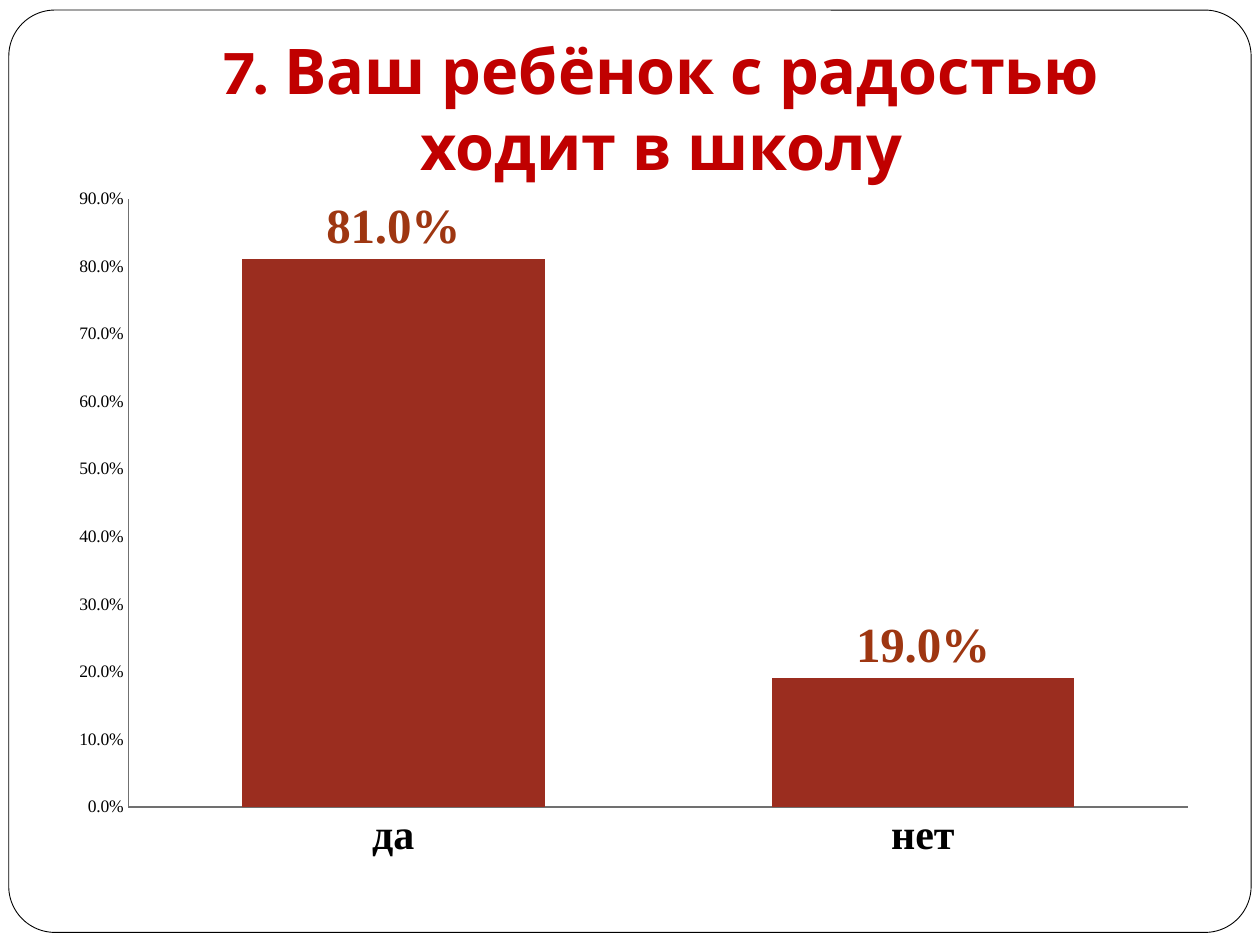
from dataclasses import dataclass

from lxml import etree
from pptx import Presentation
from pptx.chart.data import CategoryChartData
from pptx.dml.color import RGBColor
from pptx.enum.chart import XL_CHART_TYPE, XL_LABEL_POSITION, XL_TICK_MARK
from pptx.enum.shapes import MSO_SHAPE
from pptx.enum.text import MSO_ANCHOR, PP_ALIGN
from pptx.oxml.ns import qn
from pptx.util import Inches, Pt

COLUMNS = XL_CHART_TYPE.COLUMN_CLUSTERED
OUTSIDE_END = XL_LABEL_POSITION.OUTSIDE_END
NO_TICKS = XL_TICK_MARK.NONE
ROUNDED = MSO_SHAPE.ROUNDED_RECTANGLE
BOTTOM = MSO_ANCHOR.BOTTOM
CENTER = PP_ALIGN.CENTER


@dataclass(frozen=True)
class Theme:
    paper: RGBColor = RGBColor.from_string("FFFFFF")
    ink: RGBColor = RGBColor.from_string("000000")
    axis: RGBColor = RGBColor.from_string("707070")
    title: RGBColor = RGBColor.from_string("C00000")
    bar: RGBColor = RGBColor.from_string("9B2D1F")
    label: RGBColor = RGBColor.from_string("9E3611")
    title_font: str = "Karla"
    chart_font: str = "Times New Roman"
    title_size: int = 36
    label_size: int = 28
    category_size: int = 24
    scale_size: int = 10


THEME = Theme()


def style_font(font, name, size, color, bold=False):
    font.name = name
    font.size = Pt(size)
    font.color.rgb = color
    font.bold = bold


def add_frame(page, box):
    frame = page.shapes.add_shape(ROUNDED, *box)
    frame.adjustments[0] = 0.05
    frame.shadow.inherit = False
    frame.fill.solid()
    frame.fill.fore_color.rgb = THEME.paper
    frame.line.color.rgb = THEME.ink
    frame.line.width = Pt(0.5)


def add_title(page, box, text):
    text_frame = page.shapes.add_textbox(*box).text_frame
    text_frame.word_wrap = True
    text_frame.vertical_anchor = BOTTOM
    text_frame.margin_bottom = Inches(0.1)
    para = text_frame.paragraphs[0]
    para.alignment = CENTER
    span = para.add_run()
    span.text = text
    style_font(span.font, THEME.title_font, THEME.title_size, THEME.title, True)


def set_plot_area(chart, **fractions):
    plot_area = chart._chartSpace.chart.plotArea
    for old in plot_area.findall(qn("c:layout")):
        plot_area.remove(old)
    layout = etree.Element(qn("c:layout"))
    manual = etree.SubElement(layout, qn("c:manualLayout"))
    settings = {"layoutTarget": "inner", "xMode": "edge", "yMode": "edge", **fractions}
    for name, value in settings.items():
        etree.SubElement(manual, qn(f"c:{name}")).set("val", str(value))
    plot_area.insert(0, layout)


def style_axis(axis, size, bold=False):
    axis.has_major_gridlines = False
    axis.major_tick_mark = NO_TICKS
    axis.minor_tick_mark = NO_TICKS
    axis.format.line.color.rgb = THEME.axis
    axis.format.line.width = Pt(0.75)
    style_font(axis.tick_labels.font, THEME.chart_font, size, THEME.ink, bold)


def add_answers_chart(page, box, answers):
    chart_data = CategoryChartData(number_format="0.0%")
    chart_data.categories = list(answers)
    chart_data.add_series("Series 1", list(answers.values()))
    chart = page.shapes.add_chart(COLUMNS, *box, chart_data).chart
    chart.has_legend = False
    chart.has_title = False
    style_font(chart.font, THEME.chart_font, THEME.scale_size, THEME.ink)
    set_plot_area(chart, x=0.06, y=0.03, w=0.92, h=0.87)

    style_axis(chart.category_axis, THEME.category_size, True)
    scale = chart.value_axis
    style_axis(scale, THEME.scale_size)
    scale.minimum_scale, scale.maximum_scale, scale.major_unit = 0, 0.9, 0.1
    scale.tick_labels.number_format = "0.0%"
    scale.tick_labels.number_format_is_linked = False

    plot = chart.plots[0]
    plot.gap_width = 75
    plot.vary_by_categories = False
    bars = plot.series[0]
    bars.format.fill.solid()
    bars.format.fill.fore_color.rgb = THEME.bar
    labels = bars.data_labels
    labels.show_value = True
    labels.position = OUTSIDE_END
    labels.number_format = "0.0%"
    labels.number_format_is_linked = False
    style_font(labels.font, THEME.chart_font, THEME.label_size, THEME.label, True)


def inch_box(*lengths):
    return [Inches(length) for length in lengths]


def main():
    deck = Presentation()
    deck.slide_width, deck.slide_height = Inches(10), Inches(7.5)
    page = deck.slides.add_slide(deck.slide_layouts[6])
    add_frame(page, inch_box(0.07, 0.08, 9.86, 7.32))
    add_title(page, inch_box(1, 0.3, 8.5, 1.25), "7. Ваш ребёнок с радостью ходит в школу")
    add_answers_chart(page, inch_box(0.47, 1.41, 9.14, 5.55), {"да": 0.81, "нет": 0.19})
    deck.save("out.pptx")


if __name__ == "__main__":
    main()
